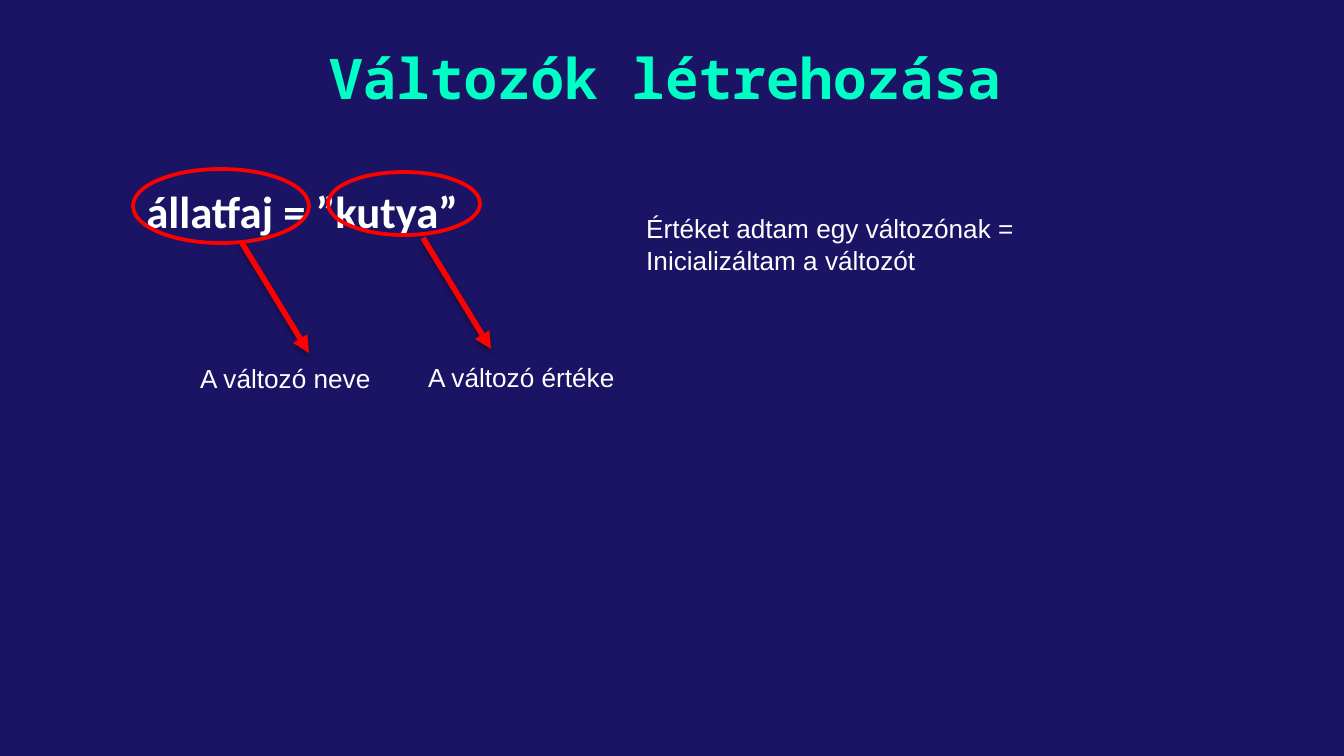
from dataclasses import dataclass

from lxml import etree
from pptx import Presentation
from pptx.dml.color import RGBColor
from pptx.enum.shapes import MSO_CONNECTOR, MSO_SHAPE
from pptx.enum.text import MSO_ANCHOR, MSO_AUTO_SIZE, PP_ALIGN
from pptx.oxml import parse_xml
from pptx.oxml.ns import nsdecls, qn
from pptx.slide import Slide
from pptx.text.text import TextFrame
from pptx.util import Emu, Inches, Pt

OVAL = MSO_SHAPE.OVAL
STRAIGHT = MSO_CONNECTOR.STRAIGHT
TOP = MSO_ANCHOR.TOP
NO_FIT, GROW = MSO_AUTO_SIZE.NONE, MSO_AUTO_SIZE.SHAPE_TO_FIT_TEXT
LEFT, CENTER = PP_ALIGN.LEFT, PP_ALIGN.CENTER
TITLE_ONLY = 5
PX_PER_INCH = 134.4


@dataclass(frozen=True)
class Theme:
    bg: str = "1B1464"
    title: str = "00FFC5"
    text: str = "FFFFFF"
    mark: str = "FF0000"
    title_font: str = "Noto Sans Mono"
    code_font: str = "Calibri"
    body_font: str = "Arial"
    title_size: int = 30
    code_size: int = 24
    body_size: int = 14
    ring_width: int = 2
    arrow_width: int = 3


@dataclass(frozen=True)
class Box:
    x: int
    y: int
    w: int
    h: int

    def emu(self) -> tuple[Emu, ...]:
        return tuple(px(v) for v in (self.x, self.y, self.w, self.h))


@dataclass(frozen=True)
class Callout:
    ring: Box
    start: tuple[int, int]
    end: tuple[int, int]
    label: Box
    text: str


THEME = Theme()
CALLOUTS = (
    Callout(Box(133, 169, 176, 74), (242, 243), (309, 353),
            Box(187, 356, 245, 46), "A változó neve"),
    Callout(Box(328, 172, 152, 63), (423, 238), (491, 349),
            Box(415, 355, 245, 46), "A változó értéke"),
)


def px(n: int) -> Emu:
    return Inches(n / PX_PER_INCH)


def write(tf: TextFrame, *lines: str, font: str = THEME.body_font,
          size: int = THEME.body_size, color: str = THEME.text, bold: bool = False,
          align: PP_ALIGN = LEFT, spacing: float = 1.0) -> None:
    for i, line in enumerate(lines):
        p = tf.add_paragraph() if i else tf.paragraphs[0]
        p.alignment = align
        p.line_spacing = spacing
        r = p.add_run()
        r.text = line
        r.font.name = font
        r.font.size = Pt(size)
        r.font.bold = bold
        r.font.color.rgb = RGBColor.from_string(color)


def add_title(s: Slide, box: Box, text: str) -> None:
    sp = s.shapes.title
    sp.left, sp.top, sp.width, sp.height = box.emu()
    tf = sp.text_frame
    tf.auto_size = NO_FIT
    tf.vertical_anchor = TOP
    tf.margin_left = tf.margin_right = tf.margin_top = tf.margin_bottom = Inches(0.1)
    write(tf, text, font=THEME.title_font, size=THEME.title_size,
          color=THEME.title, bold=True, align=CENTER)


def add_text(s: Slide, box: Box, *lines: str, **fmt) -> None:
    tf = s.shapes.add_textbox(*box.emu()).text_frame
    tf.word_wrap = True
    tf.auto_size = GROW
    write(tf, *lines, **fmt)


def add_ring(s: Slide, box: Box) -> None:
    sp = s.shapes.add_shape(OVAL, *box.emu())
    sp.shadow.inherit = False
    sp.fill.background()
    sp.line.color.rgb = RGBColor.from_string(THEME.mark)
    sp.line.width = Pt(THEME.ring_width)


def add_arrow(s: Slide, start: tuple[int, int], end: tuple[int, int]) -> None:
    cx = s.shapes.add_connector(STRAIGHT, *(px(v) for v in start + end))
    cx.line.color.rgb = RGBColor.from_string(THEME.mark)
    cx.line.width = Pt(THEME.arrow_width)
    etree.SubElement(cx.line._get_or_add_ln(), qn("a:tailEnd"), type="triangle")
    cx._element.spPr.append(parse_xml(
        f'<a:effectLst {nsdecls("a")}>'
        '<a:outerShdw blurRad="40000" dist="23000" dir="5400000" rotWithShape="0">'
        '<a:srgbClr val="000000"><a:alpha val="35000"/></a:srgbClr>'
        '</a:outerShdw></a:effectLst>'))


def add_callout(s: Slide, c: Callout) -> None:
    add_ring(s, c.ring)
    add_arrow(s, c.start, c.end)
    add_text(s, c.label, c.text)


def main() -> None:
    prs = Presentation()
    prs.slide_width, prs.slide_height = px(1344), px(756)
    s = prs.slides.add_slide(prs.slide_layouts[TITLE_ONLY])
    s.background.fill.solid()
    s.background.fill.fore_color.rgb = RGBColor.from_string(THEME.bg)

    add_title(s, Box(198, 30, 968, 140), "Változók létrehozása ")
    add_text(s, Box(133, 169, 1187, 74), "állatfaj = ”kutya”", font=THEME.code_font,
             size=THEME.code_size, bold=True, spacing=1.15)
    for callout in CALLOUTS:
        add_callout(s, callout)
    add_text(s, Box(633, 206, 469, 77),
             "Értéket adtam egy változónak =", "Inicializáltam a változót")
    prs.save("out.pptx")


if __name__ == "__main__":
    main()
